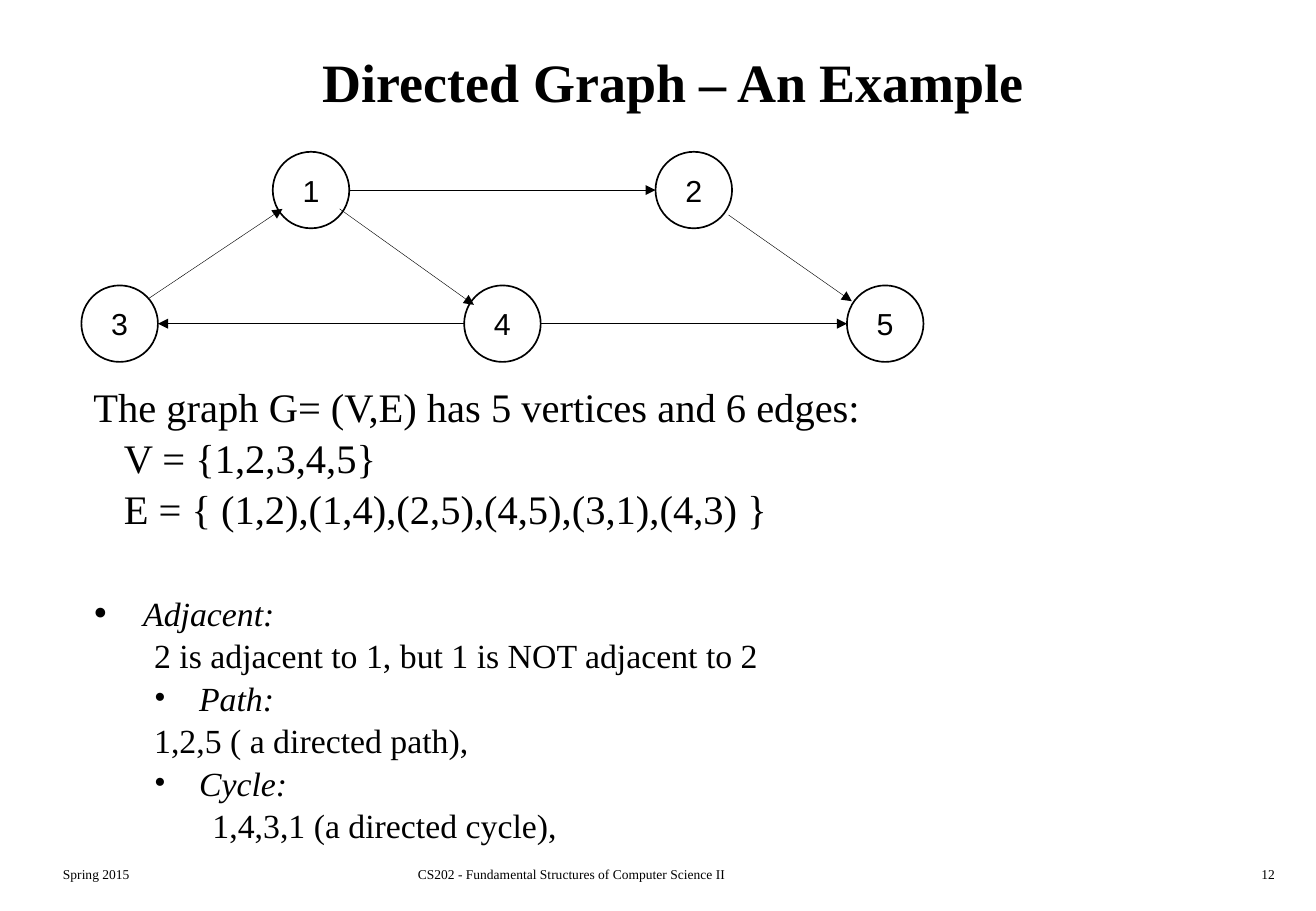
import pptx
import pptx.util
import pptx.dml.color
import pptx.enum.shapes
import pptx.enum.text
import pptx.oxml.ns
from lxml import etree
from pptx.util import Inches

BLACK = pptx.dml.color.RGBColor(0, 0, 0)
SERIF = "Times New Roman"
SANS = "Arial"
ALIGN = pptx.enum.text.PP_ALIGN
ANCHOR = pptx.enum.text.MSO_ANCHOR

# Vertices lie on a grid of columns and two rows
DIAMETER = 0.63
COLUMN_LEFT, COLUMN_STEP = 0.67, 1.575
ROW_TOPS = (1.25, 2.35)
VERTICES = {1: (1, 0), 4: (2, 1), 2: (3, 0), 5: (4, 1), 3: (0, 1)}

# Edges: from, offset in the first vertex, to, offset in the second vertex
LEFT, RIGHT = (0, DIAMETER / 2), (DIAMETER, DIAMETER / 2)
EDGES = [
    (1, (0.55, 0.47), 4, (0.08, 0.16)),
    (1, RIGHT, 2, LEFT),
    (2, (0.6, 0.52), 5, (0.04, 0.13)),
    (4, LEFT, 3, RIGHT),
    (4, RIGHT, 5, LEFT),
    (3, (0.55, 0.11), 1, (0.08, 0.47)),
]

# Body: text, size, italic, left margin, bullet hang, bullet percent, space before
BODY = [
    ("The graph G= (V,E) has 5 vertices and 6 edges:", 24, False, 0, 0, 0, 0),
    ("V = {1,2,3,4,5}", 24, False, 0.25, 0, 0, 0),
    ("E = { (1,2),(1,4),(2,5),(4,5),(3,1),(4,3) }", 24, False, 0.25, 0, 0, 0),
    ("Adjacent:", 20, True, 0.41, 0.41, 120, 34),
    ("2 is adjacent to 1, but 1 is NOT adjacent to 2", 20, False, 0.5, 0, 0, 0),
    ("Path:", 20, True, 0.87, 0.37, 100, 0),
    ("1,2,5 ( a directed path),", 20, False, 0.5, 0, 0, 0),
    ("Cycle:", 20, True, 0.87, 0.37, 100, 0),
    ("1,4,3,1 (a directed cycle),", 20, False, 0.98, 0, 0, 0),
]


def add_element(parent, tag, **attributes):
    return etree.SubElement(parent, pptx.oxml.ns.qn(tag), attributes)


def style_paragraph(paragraph, text, size, font=SERIF, bold=False, italic=False,
                    align=ALIGN.LEFT):
    paragraph.text = text
    paragraph.alignment = align
    paragraph.font.name = font
    paragraph.font.size = pptx.util.Pt(size)
    paragraph.font.bold = bold
    paragraph.font.italic = italic
    paragraph.font.color.rgb = BLACK


def add_text_frame(slide, left, top, width, height, anchor=ANCHOR.TOP):
    box = slide.shapes.add_textbox(Inches(left), Inches(top),
                                   Inches(width), Inches(height))
    box.text_frame.word_wrap = True
    box.text_frame.vertical_anchor = anchor
    return box.text_frame


def vertex_corner(label):
    column, row = VERTICES[label]
    return COLUMN_LEFT + COLUMN_STEP * column, ROW_TOPS[row]


def add_vertex(slide, label):
    left, top = vertex_corner(label)
    circle = slide.shapes.add_shape(pptx.enum.shapes.MSO_SHAPE.OVAL, Inches(left),
                                    Inches(top), Inches(DIAMETER), Inches(DIAMETER))
    circle.shadow.inherit = False
    circle.fill.background()
    circle.line.color.rgb = BLACK
    circle.line.width = pptx.util.Pt(1)
    circle.text_frame.word_wrap = False
    circle.text_frame.vertical_anchor = ANCHOR.MIDDLE
    style_paragraph(circle.text_frame.paragraphs[0], str(label), 18, SANS,
                    align=ALIGN.CENTER)


def add_edge(slide, source, source_offset, target, target_offset):
    ends = []
    for label, offset in ((source, source_offset), (target, target_offset)):
        ends += [Inches(corner + shift)
                 for corner, shift in zip(vertex_corner(label), offset)]
    arrow = slide.shapes.add_connector(pptx.enum.shapes.MSO_CONNECTOR.STRAIGHT, *ends)
    arrow.line.color.rgb = BLACK
    arrow.line.width = pptx.util.Pt(0.25)
    properties = arrow.line.color and arrow.element.spPr
    add_element(properties.find(pptx.oxml.ns.qn("a:ln")), "a:tailEnd", type="triangle")
    add_element(properties, "a:effectLst")


def add_body(slide):
    frame = add_text_frame(slide, 0.67, 3.08, 6.55, 3.76)
    frame.word_wrap = False
    for index, (text, size, italic, margin, hang, bullet, space) in enumerate(BODY):
        paragraph = frame.add_paragraph() if index else frame.paragraphs[0]
        style_paragraph(paragraph, text, size, italic=italic)
        paragraph.line_spacing = 1.05
        paragraph.space_before = pptx.util.Pt(space)
        # Indents and bullets
        properties = paragraph._p.get_or_add_pPr()
        properties.set("marL", str(Inches(margin)))
        properties.set("indent", str(Inches(-hang)))
        if bullet:
            marks = [
                add_element(properties, "a:buSzPct", val=str(bullet * 1000)),
                add_element(properties, "a:buFont", typeface=SERIF),
                add_element(properties, "a:buChar", char="•"),
            ]
            defaults = properties.find(pptx.oxml.ns.qn("a:defRPr"))
            for mark in marks:
                defaults.addprevious(mark)


def main():
    presentation = pptx.Presentation()
    presentation.slide_width = Inches(10.83)
    presentation.slide_height = Inches(7.5)
    slide = presentation.slides.add_slide(presentation.slide_layouts[6])

    # Footer
    for text, left, width, align in (
        ("Spring 2015", 0.42, 2.26, ALIGN.LEFT),
        ("CS202 - Fundamental Structures of Computer Science II", 3.34, 4.06, ALIGN.LEFT),
        ("12", 8.33, 2.26, ALIGN.RIGHT),
    ):
        frame = add_text_frame(slide, left, 7.08, width, 0.25)
        style_paragraph(frame.paragraphs[0], text, 8, align=align)

    # Title
    frame = add_text_frame(slide, 0.42, 0.17, 10.25, 1, ANCHOR.MIDDLE)
    style_paragraph(frame.paragraphs[0], "Directed Graph – An Example", 32,
                    bold=True, align=ALIGN.CENTER)

    # Graph
    for edge in EDGES:
        add_edge(slide, *edge)
    for label in VERTICES:
        add_vertex(slide, label)

    # Explanation
    add_body(slide)
    presentation.save("out.pptx")


if __name__ == "__main__":
    main()
